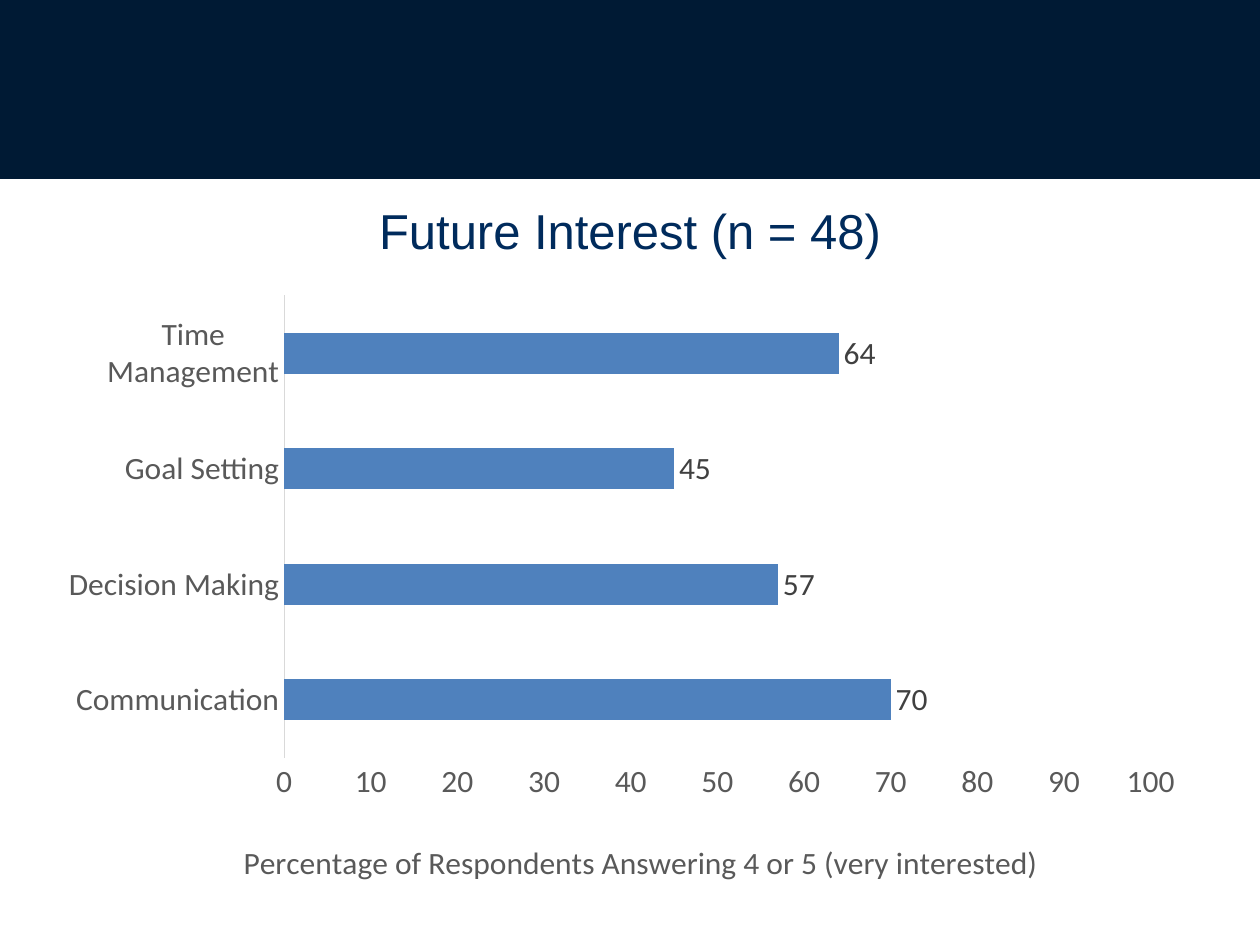
from lxml import etree
from pptx import Presentation
from pptx.chart.data import CategoryChartData
from pptx.dml.color import RGBColor
from pptx.enum.chart import XL_CHART_TYPE, XL_LABEL_POSITION, XL_TICK_MARK
from pptx.enum.shapes import MSO_SHAPE
from pptx.enum.text import MSO_ANCHOR, PP_ALIGN
from pptx.oxml.ns import qn
from pptx.util import Inches, Pt

BAR_CLUSTERED = XL_CHART_TYPE.BAR_CLUSTERED
OUTSIDE_END = XL_LABEL_POSITION.OUTSIDE_END
NO_TICK = XL_TICK_MARK.NONE
RECTANGLE = MSO_SHAPE.RECTANGLE

HEADING = "Future Interest (n = 48)"
AXIS_CAPTION = "Percentage of Respondents Answering 4 or 5 (very interested)"
INTEREST = {
    "Communication": 70,
    "Decision Making": 57,
    "Goal Setting": 45,
    "Time Management": 64,
}
BAND_COLOR, HEADING_COLOR, BAR_COLOR = "001A34", "002B5C", "4F81BD"
AXIS_COLOR, LABEL_COLOR, LINE_COLOR = "595959", "404040", "D9D9D9"

# Fractions of the chart area
PLOT_LAYOUT = {"xMode": "edge", "yMode": "edge", "x": 0.21, "y": 0.02, "w": 0.75, "h": 0.77}
CAPTION_LAYOUT = {"xMode": "edge", "yMode": "edge", "x": 0.17, "y": 0.92}


def rgb(color):
    return RGBColor.from_string(color)


def set_font(font, size, color, name="Calibri"):
    font.size, font.name, font.bold = Pt(size), name, False
    font.color.rgb = rgb(color)


def set_layout(parent, position, values):
    """Place a chart part by hand, with c:layout as the given child of parent."""
    for old in parent.findall(qn("c:layout")):
        parent.remove(old)
    layout = etree.Element(qn("c:layout"))
    parent.insert(position, layout)
    manual = etree.SubElement(layout, qn("c:manualLayout"))
    if "w" in values:
        etree.SubElement(manual, qn("c:layoutTarget")).set("val", "inner")
    for tag, value in values.items():
        etree.SubElement(manual, qn(f"c:{tag}")).set("val", str(value))


prs = Presentation()
prs.slide_width, prs.slide_height = Inches(10), Inches(7.5)
slide = prs.slides.add_slide(prs.slide_layouts[6])

band = slide.shapes.add_shape(RECTANGLE, 0, 0, prs.slide_width, Inches(1.42))
band.shadow.inherit = False
band.fill.solid()
band.fill.fore_color.rgb = rgb(BAND_COLOR)
band.line.fill.background()

heading = slide.shapes.add_textbox(Inches(0.5), Inches(1.5), Inches(9), Inches(0.5))
frame = heading.text_frame
frame.word_wrap = True
frame.vertical_anchor = MSO_ANCHOR.TOP
frame.margin_top = Inches(0.09)
paragraph = frame.paragraphs[0]
paragraph.text = HEADING
paragraph.alignment = PP_ALIGN.CENTER
set_font(paragraph.font, 28, HEADING_COLOR, "Arial")

interest_data = CategoryChartData(number_format="0")
interest_data.categories = list(INTEREST)
interest_data.add_series("Series 1", list(INTEREST.values()))
chart = slide.shapes.add_chart(
    BAR_CLUSTERED, Inches(0.33), Inches(2.25), Inches(9.17), Inches(4.83), interest_data
).chart
chart.has_title = chart.has_legend = False
set_font(chart.font, 10, "000000")

plot = chart.plots[0]
plot.gap_width = 182
plot.vary_by_categories = False
bars = plot.series[0].format.fill
bars.solid()
bars.fore_color.rgb = rgb(BAR_COLOR)

plot.has_data_labels = True
labels = plot.data_labels
label_format = {
    "show_value": True,
    "number_format": "0",
    "number_format_is_linked": False,
    "position": OUTSIDE_END,
}
for key, value in label_format.items():
    setattr(labels, key, value)
set_font(labels.font, 18, LABEL_COLOR)

categories, percent = chart.category_axis, chart.value_axis
for axis in (categories, percent):
    axis.major_tick_mark = axis.minor_tick_mark = NO_TICK
    axis.has_major_gridlines = False
    set_font(axis.tick_labels.font, 18, AXIS_COLOR)
categories.format.line.color.rgb = rgb(LINE_COLOR)
categories.format.line.width = Pt(0.75)
percent.format.line.fill.background()
percent.minimum_scale, percent.maximum_scale, percent.major_unit = 0, 100, 10
percent.tick_labels.number_format = "0"
percent.tick_labels.number_format_is_linked = False

caption = percent.axis_title.text_frame.paragraphs[0]
caption_run = caption.add_run()
caption_run.text = AXIS_CAPTION
set_font(caption_run.font, 18, AXIS_COLOR)

plot_area = chart.element.find(f".//{qn('c:plotArea')}")
set_layout(plot_area, 0, PLOT_LAYOUT)
set_layout(plot_area.find(f".//{qn('c:title')}"), 1, CAPTION_LAYOUT)

prs.save("out.pptx")
